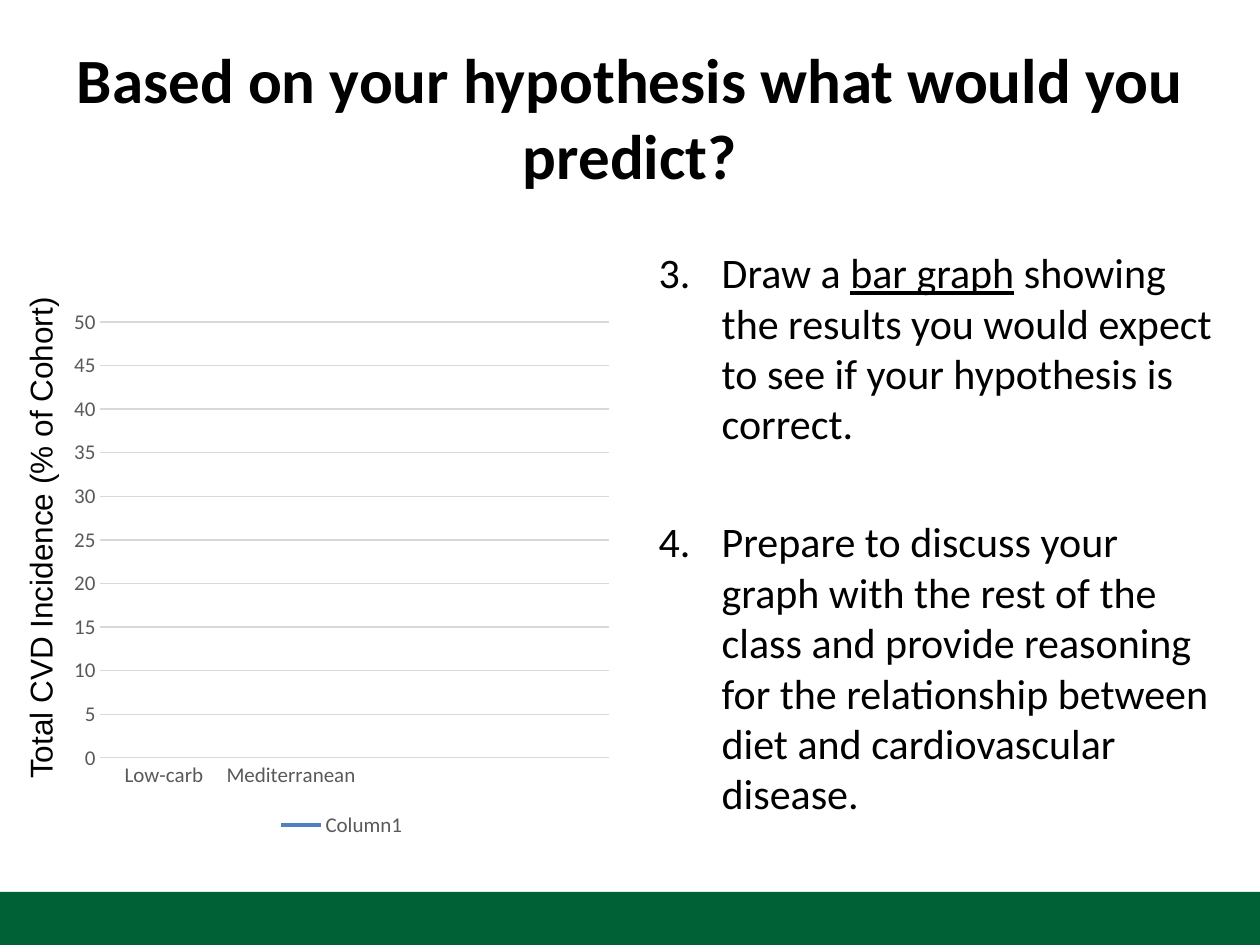
from lxml import etree
from pptx import Presentation
from pptx import util as u
from pptx.chart.data import CategoryChartData
from pptx.dml.color import RGBColor
from pptx.enum import chart as charts, shapes, text
from pptx.oxml.ns import qn

# Content
TITLE = "Based on your hypothesis what would you predict?"
TASKS = [  # each task is a list of (text, underlined)
    [("Draw a ", False), ("bar graph", True),
     (" showing the results you would expect to see if your hypothesis is correct.", False)],
    [("Prepare to discuss your graph with the rest of the class and provide reasoning "
      "for the relationship between diet and cardiovascular disease.", False)],
]
FIRST_NUMBER = 3
AXIS_LABEL = "Total CVD Incidence (% of Cohort)"
CATEGORIES = ["Low-carb", "Mediterranean", "", ""]
SERIES = ("Column1", [None, 50, None, None])
COLOURS = {"text": "000000", "band": "006036", "grid": "D9D9D9",
           "label": "595959", "line": "4F81BD"}

# Layout in centimetres: left, top, width, height
WIDTH, HEIGHT, BAND_HEIGHT = 25.4, 19.05, 1.07
TITLE_BOX = (1.27, 0.76, 22.86, 3.18)
TASK_BOX = (13.03, 4.85, 11.84, 10.97)
CHART_BOX = (1.27, 6.02, 11.23, 10.97)
LABEL_BOX = (-4.65, 9.98, 10.92, 1.02)


def colour(name):
    return RGBColor.from_string(COLOURS[name])


def place(box):
    return [u.Cm(length) for length in box]


def set_font(font, size, name="Calibri", tint="text", bold=False, underline=False):
    font.size, font.name = u.Pt(size), name
    font.bold, font.underline = bold, underline
    font.color.rgb = colour(tint)


def add_text(slide, box, paragraphs, size, name="Calibri", bold=False,
             align=None, anchor=text.MSO_ANCHOR.TOP, rotation=0):
    shape = slide.shapes.add_textbox(*place(box))
    shape.rotation = rotation
    frame = shape.text_frame
    frame.word_wrap, frame.vertical_anchor = True, anchor
    for index, runs in enumerate(paragraphs):
        paragraph = frame.paragraphs[0] if index == 0 else frame.add_paragraph()
        paragraph.alignment = align
        for content, underline in runs:
            run = paragraph.add_run()
            run.text = content
            set_font(run.font, size, name, bold=bold, underline=underline)
    return frame


def number(paragraph, start):
    properties = paragraph._p.get_or_add_pPr()
    indent = u.Cm(1.27)
    properties.set("marL", str(indent))
    properties.set("indent", str(-indent))
    etree.SubElement(properties, qn("a:buFont"), typeface="+mj-lt")
    etree.SubElement(properties, qn("a:buAutoNum"), type="arabicPeriod", startAt=str(start))


def style_line(line, tint, width):
    line.color.rgb = colour(tint)
    line.width = u.Pt(width)


def add_line_chart(slide):
    data = CategoryChartData()
    data.categories = CATEGORIES
    data.add_series(*SERIES)
    chart = slide.shapes.add_chart(charts.XL_CHART_TYPE.LINE, *place(CHART_BOX), data).chart
    chart.has_title = False
    set_font(chart.font, 10)

    chart.has_legend = True
    chart.legend.position = charts.XL_LEGEND_POSITION.BOTTOM
    chart.legend.include_in_layout = False
    category_axis, value_axis = chart.category_axis, chart.value_axis
    for part in (chart.legend.font, category_axis.tick_labels.font, value_axis.tick_labels.font):
        set_font(part, 12, tint="label")
    for axis in (category_axis, value_axis):
        axis.major_tick_mark = axis.minor_tick_mark = charts.XL_TICK_MARK.NONE

    style_line(category_axis.format.line, "grid", 0.75)
    value_axis.format.line.fill.background()
    value_axis.minimum_scale, value_axis.maximum_scale = 0, 50
    value_axis.major_unit = 5
    style_line(value_axis.major_gridlines.format.line, "grid", 0.75)

    chart.plots[0].vary_by_categories = False
    series = chart.plots[0].series[0]
    series.smooth = False
    series.marker.style = charts.XL_MARKER_STYLE.NONE
    style_line(series.format.line, "line", 2.25)


def main():
    presentation = Presentation()
    presentation.slide_width, presentation.slide_height = u.Cm(WIDTH), u.Cm(HEIGHT)
    slide = presentation.slides.add_slide(presentation.slide_layouts[6])

    # Footer band
    band = slide.shapes.add_shape(shapes.MSO_SHAPE.RECTANGLE,
                                  *place((0, HEIGHT - BAND_HEIGHT, WIDTH, BAND_HEIGHT)))
    band.shadow.inherit = False
    band.fill.solid()
    band.fill.fore_color.rgb = colour("band")
    band.line.fill.background()

    # Title
    add_text(slide, TITLE_BOX, [[(TITLE, False)]], 36, bold=True,
             align=text.PP_ALIGN.CENTER, anchor=text.MSO_ANCHOR.MIDDLE)

    # Numbered tasks
    tasks = add_text(slide, TASK_BOX, TASKS, 24)
    for paragraph, space in zip(tasks.paragraphs, (4.8, 38.6)):
        paragraph.space_before = u.Pt(space)
        number(paragraph, FIRST_NUMBER)

    # Empty graph with its vertical label
    add_line_chart(slide)
    add_text(slide, LABEL_BOX, [[(AXIS_LABEL, False)]], 18, name="Arial", rotation=270)

    presentation.save("out.pptx")


if __name__ == "__main__":
    main()
